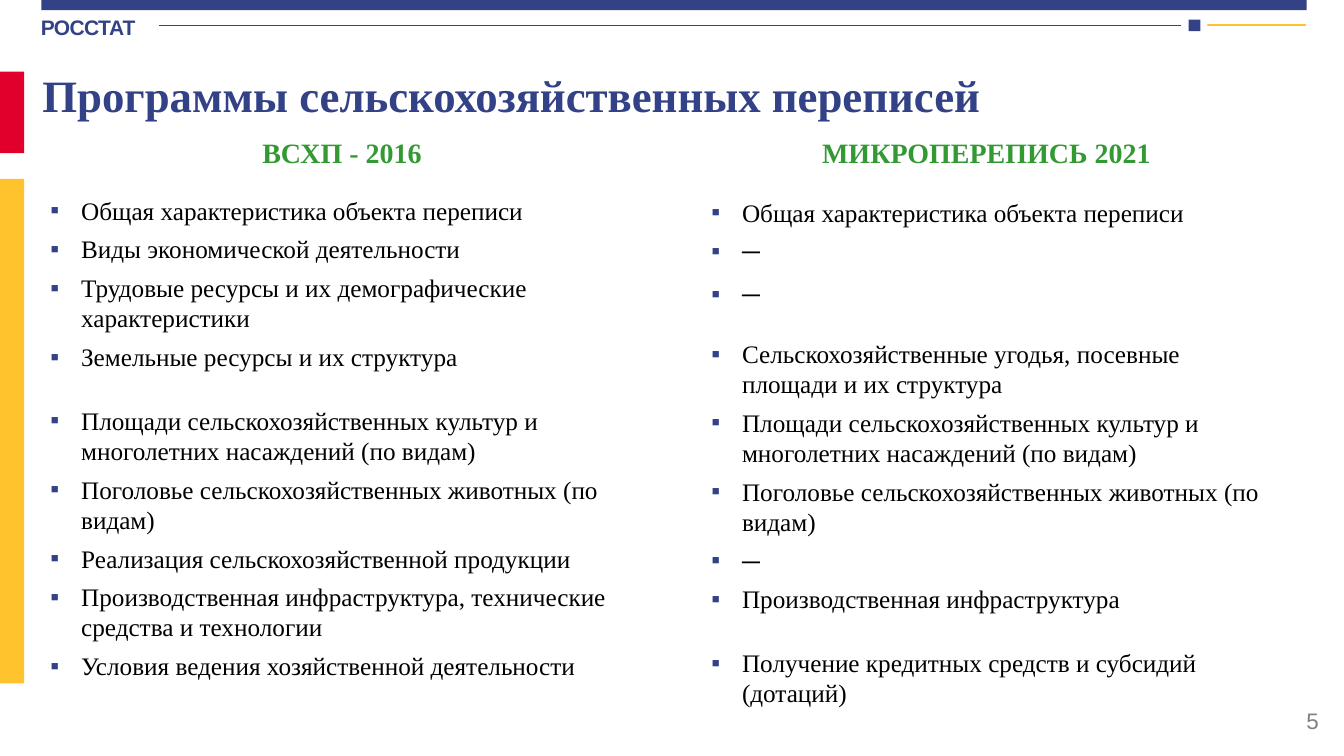
from lxml import etree
from pptx import Presentation
from pptx.dml.color import RGBColor
from pptx.enum.shapes import MSO_CONNECTOR, MSO_SHAPE
from pptx.enum.text import MSO_ANCHOR, PP_ALIGN
from pptx.oxml.ns import qn
from pptx.util import Inches, Pt

NAVY = RGBColor(0x33, 0x42, 0x86)
RED = RGBColor(0xE1, 0x00, 0x2B)
YELLOW = RGBColor(0xFF, 0xC3, 0x2E)
GREEN = RGBColor(0x33, 0x99, 0x33)
GRAY = RGBColor(0x80, 0x80, 0x80)
WHITE = RGBColor(0xFF, 0xFF, 0xFF)
BLACK = RGBColor(0, 0, 0)

SERIF = "Times New Roman"
SANS = "Arial"
GAP = 6
DASH = "─"

# Each item is its text and, where it differs, the space before it in points
CENSUS_2016 = [
    ("Общая характеристика объекта переписи", 0),
    ("Виды экономической деятельности", GAP),
    ("Трудовые ресурсы и их демографические характеристики", GAP),
    ("Земельные ресурсы и их структура", GAP),
    ("Площади сельскохозяйственных культур и многолетних насаждений (по видам)", 42),
    ("Поголовье сельскохозяйственных животных (по видам)", GAP),
    ("Реализация сельскохозяйственной продукции", GAP),
    ("Производственная инфраструктура, технические средства и технологии", GAP),
    ("Условия ведения хозяйственной деятельности", GAP),
]
MICROCENSUS_2021 = [
    ("Общая характеристика объекта переписи", 0),
    (DASH, GAP),
    (DASH, 12),
    ("Сельскохозяйственные угодья, посевные площади и их структура", 36),
    ("Площади сельскохозяйственных культур и многолетних насаждений (по видам)", GAP),
    ("Поголовье сельскохозяйственных животных (по видам)", GAP),
    (DASH, GAP),
    ("Производственная инфраструктура", GAP),
    ("Получение кредитных средств и субсидий (дотаций)", 42),
]


def add_block(page, left, top, width, height, color):
    block = page.shapes.add_shape(MSO_SHAPE.RECTANGLE, Inches(left), Inches(top),
                                  Inches(width), Inches(height))
    block.shadow.inherit = False
    block.fill.solid()
    block.fill.fore_color.rgb = color
    block.line.fill.background()


def add_rule(page, left, right, top, color):
    rule = page.shapes.add_connector(MSO_CONNECTOR.STRAIGHT, Inches(left), Inches(top),
                                     Inches(right), Inches(top))
    rule.line.color.rgb = color
    rule.line.width = Pt(2)
    etree.SubElement(rule._element.spPr, qn("a:effectLst"))


def add_box(page, left, top, width, height, margins=(0.2, 0.1),
            anchor=MSO_ANCHOR.TOP, wrap=True):
    box = page.shapes.add_textbox(Inches(left), Inches(top), Inches(width), Inches(height))
    frame = box.text_frame
    frame.margin_left = frame.margin_right = Inches(margins[0])
    frame.margin_top = frame.margin_bottom = Inches(margins[1])
    frame.vertical_anchor = anchor
    frame.word_wrap = wrap
    return frame


def write(para, text, size, color, font=SERIF, bold=False, align=PP_ALIGN.LEFT,
          spacing=None, before=0, after=0, tracking=None):
    para.alignment = align
    para.line_spacing = spacing
    para.space_before = Pt(before)
    para.space_after = Pt(after)
    span = para.add_run()
    span.text = text
    span.font.size = Pt(size)
    span.font.name = font
    span.font.bold = bold
    span.font.color.rgb = color
    if tracking is not None:
        span.font._element.set("spc", str(round(tracking * 100)))


def add_bullet(para):
    properties = para._p.get_or_add_pPr()
    properties.set("marL", str(Inches(0.61)))
    properties.set("indent", str(-Inches(0.61)))
    bullet_color = etree.SubElement(properties, qn("a:buClr"))
    etree.SubElement(bullet_color, qn("a:srgbClr"), val=str(NAVY))
    etree.SubElement(properties, qn("a:buFont"), typeface=SANS)
    etree.SubElement(properties, qn("a:buChar"), char="▪")


def add_list(page, left, top, width, height, items):
    frame = add_box(page, left, top, width, height, margins=(0, 0.01))
    for index, (text, before) in enumerate(items):
        para = frame.add_paragraph() if index else frame.paragraphs[0]
        add_bullet(para)
        write(para, text, 36, BLACK, before=before, after=GAP)


def add_heading(page, left, width, text):
    frame = add_box(page, left, 2.58, width, 0.88, wrap=False)
    write(frame.paragraphs[0], text, 40, GREEN, bold=True, align=PP_ALIGN.CENTER)


def main():
    deck = Presentation()
    deck.slide_width = Inches(26.66)
    deck.slide_height = Inches(15)
    page = deck.slides.add_slide(deck.slide_layouts[6])

    # Top band and side bars
    add_block(page, 0.82, 0, 25.1, 0.2, NAVY)
    add_block(page, 0, 1.42, 0.48, 1.62, RED)
    add_block(page, 0, 3.55, 0.48, 10.01, YELLOW)

    # Header line with its square marker
    brand = add_box(page, 0.81, 0.29, 2.29, 0.53, margins=(0, 0))
    write(brand.paragraphs[0], "РОССТАТ", 30, NAVY, font=SANS, bold=True, tracking=-0.9)
    add_rule(page, 3.15, 23.58, 0.51, NAVY)
    add_rule(page, 23.72, 25.9, 0.5, YELLOW)
    add_block(page, 23.43, 0.39, 0.52, 0.23, WHITE)
    add_block(page, 23.58, 0.39, 0.23, 0.23, NAVY)

    # Title
    title = add_box(page, 0.64, 1.19, 26.02, 1.51, anchor=MSO_ANCHOR.MIDDLE)
    write(title.paragraphs[0], "Программы сельскохозяйственных переписей", 64, NAVY,
          bold=True, spacing=0.9)

    # Two programmes side by side
    add_heading(page, 4.82, 3.93, "ВСХП - 2016")
    add_heading(page, 15.89, 7.35, "МИКРОПЕРЕПИСЬ 2021")
    add_list(page, 1, 3.86, 11.66, 9.74, CENSUS_2016)
    add_list(page, 14.11, 3.9, 11, 10.24, MICROCENSUS_2021)

    # Page number
    number = add_box(page, 20.36, 13.9, 6, 0.8, anchor=MSO_ANCHOR.MIDDLE)
    write(number.paragraphs[0], "5", 32, GRAY, font=SANS, align=PP_ALIGN.RIGHT)

    deck.save("out.pptx")


if __name__ == "__main__":
    main()
